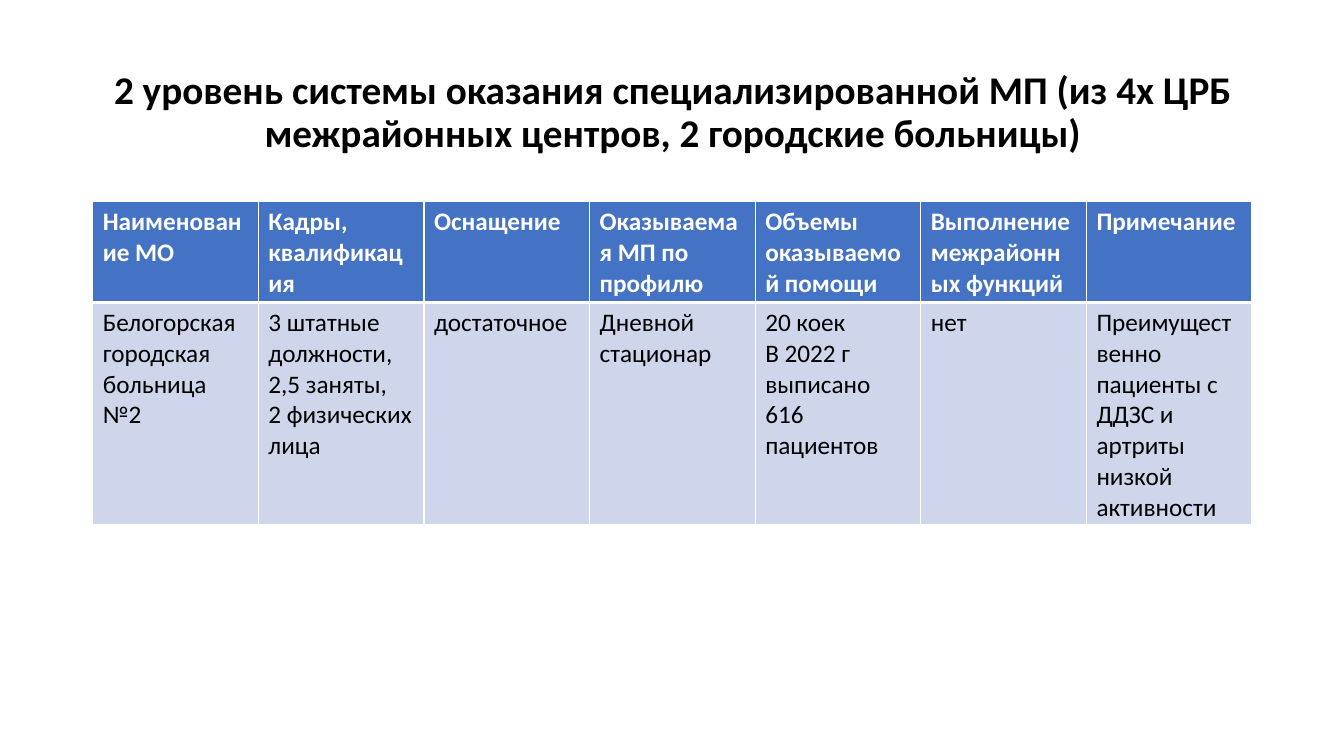
from lxml import etree
from pptx import Presentation
from pptx.dml.color import RGBColor
from pptx.enum import text
from pptx.oxml import ns
from pptx.util import Inches, Pt

BLACK = RGBColor(0x00, 0x00, 0x00)
WHITE = RGBColor(0xFF, 0xFF, 0xFF)
HEADER_BLUE = RGBColor(0x44, 0x72, 0xC4)
ROW_BLUE = RGBColor(0xCF, 0xD5, 0xEA)
FONT = "Calibri"
LEFT, WIDTH = 0.92, 11.5

TITLE = (
    "2 уровень системы оказания специализированной МП "
    "(из 4х ЦРБ межрайонных центров, 2 городские больницы)"
)
COLUMNS = [
    ("Наименование МО", ["Белогорская городская больница №2"]),
    ("Кадры, квалификация", ["3 штатные должности, 2,5 заняты,", "2 физических лица"]),
    ("Оснащение", ["достаточное"]),
    ("Оказываемая МП по профилю", ["Дневной стационар"]),
    ("Объемы оказываемой помощи", ["20 коек", "В 2022 г выписано 616 пациентов"]),
    ("Выполнение межрайонных функций", ["нет"]),
    ("Примечание", ["Преимущественно пациенты с ДДЗС и артриты низкой активности"]),
]


def add_span(para, words, size, color, bold):
    """Add one formatted run to a paragraph."""
    span = para.add_run()
    span.text = words
    span.font.name = FONT
    span.font.size = Pt(size)
    span.font.bold = bold
    span.font.color.rgb = color


def add_title(page):
    """Add the centred heading."""
    box = page.shapes.add_textbox(Inches(LEFT), Inches(0.4), Inches(WIDTH), Inches(1.45))
    frame = box.text_frame
    frame.word_wrap = True
    frame.vertical_anchor = text.MSO_ANCHOR.MIDDLE
    para = frame.paragraphs[0]
    para.alignment = text.PP_ALIGN.CENTER
    para.line_spacing = 0.9
    add_span(para, TITLE, 28, BLACK, True)


def set_borders(cell, widths):
    """Draw white cell borders, given widths in points by side."""
    properties = cell._tc.get_or_add_tcPr()
    for index, (side, width) in enumerate(widths.items()):
        line = etree.Element(ns.qn(f"a:ln{side}"), w=str(Pt(width)))
        fill = etree.SubElement(line, ns.qn("a:solidFill"))
        etree.SubElement(fill, ns.qn("a:srgbClr"), val=str(WHITE))
        properties.insert(index, line)


def fill_cell(cell, lines, background, color, bold, top, bottom):
    """Write the paragraphs of a cell and set its look."""
    cell.fill.solid()
    cell.fill.fore_color.rgb = background
    set_borders(cell, {"L": 1, "R": 1, "T": top, "B": bottom})
    frame = cell.text_frame
    for index, words in enumerate(lines):
        para = frame.add_paragraph() if index else frame.paragraphs[0]
        add_span(para, words, 18, color, bold)


def add_hospital_table(page):
    """Add the table of hospitals with its header row."""
    table = page.shapes.add_table(
        2, len(COLUMNS), Inches(LEFT), Inches(2), Inches(WIDTH), Inches(3.2)
    ).table
    table.rows[0].height = Inches(1)
    table.rows[1].height = Inches(2.2)
    for index, (heading, lines) in enumerate(COLUMNS):
        fill_cell(table.cell(0, index), [heading], HEADER_BLUE, WHITE, True, 1, 3)
        fill_cell(table.cell(1, index), lines, ROW_BLUE, BLACK, False, 3, 1)


def main():
    """Build and save the deck."""
    deck = Presentation()
    deck.slide_width = Inches(13.33)
    deck.slide_height = Inches(7.5)
    page = deck.slides.add_slide(deck.slide_layouts[6])
    add_title(page)
    add_hospital_table(page)
    deck.save("out.pptx")


if __name__ == "__main__":
    main()
